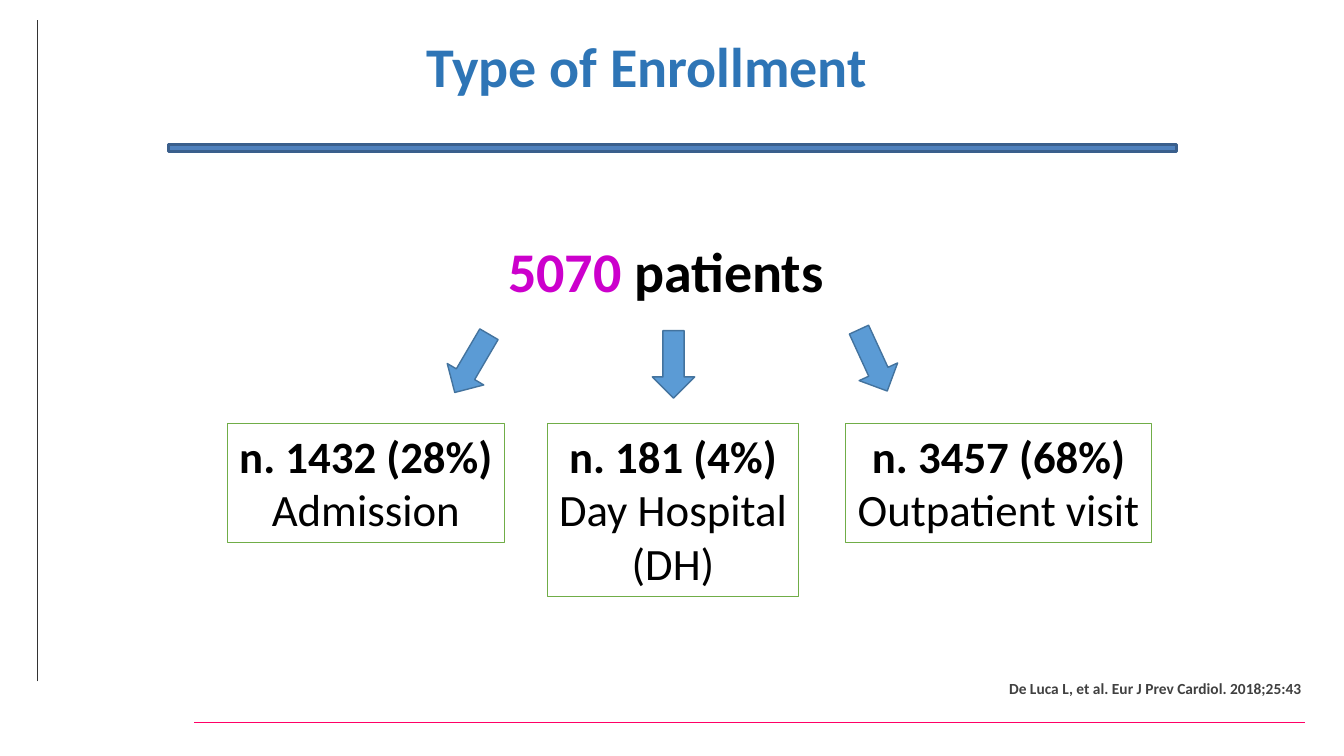
"""Build the enrollment slide: a patient total split into three groups."""
from dataclasses import dataclass

from lxml.etree import SubElement
from pptx import Presentation
from pptx.dml.color import RGBColor
from pptx.enum.shapes import MSO_CONNECTOR as Link, MSO_SHAPE as Shape
from pptx.enum.text import MSO_ANCHOR as Anchor, MSO_AUTO_SIZE as AutoSize, PP_ALIGN as Align
from pptx.oxml.ns import qn
from pptx.util import Inches, Pt


@dataclass(frozen=True)
class Theme:
    font: str = "Calibri"
    title: str = "2E75B6"
    text: str = "000000"
    total: str = "CC00CC"
    source: str = "404040"
    card_line: str = "70AD47"
    arrow: str = "5B9BD5"
    arrow_line: str = "43739E"
    bar: str = "4F81BD"
    bar_line: str = "3A5F8C"
    side_rule: str = "333333"
    base_rule: str = "FF0066"
    big: int = 40
    medium: int = 32
    small: int = 11


THEME = Theme()
WIDTH, HEIGHT = 13.33, 7.5

TITLE = "Type of Enrollment"
TOTAL = [("5070", THEME.total), (" patients", THEME.text)]
SOURCE = "De Luca L, et al. Eur J Prev Cardiol. 2018;25:43"
GROUPS = [
    {"lines": ["n. 1432 (28%)", "Admission"], "left": 2.26, "width": 2.74},
    {"lines": ["n. 181 (4%)", "Day Hospital", "(DH)"], "left": 5.43, "width": 2.49},
    {"lines": ["n. 3457 (68%)", "Outpatient visit"], "left": 8.39, "width": 3.03},
]
ARROWS = [(4.47, 3.27, 30.4), (6.47, 3.28, 0), (8.45, 3.24, -24.7)]
RULES = [
    ((0.37, 6.76), (0.37, 0.2), THEME.side_rule),
    ((12.94, 7.17), (1.92, 7.17), THEME.base_rule),
]
CARD_TOP, CARD_PADDING, LINE_HEIGHT = 4.2, 0.1, 0.54
ARROW_SIZE = (0.42, 0.67)


def color(code):
    return RGBColor.from_string(code)


def inches(*lengths):
    return [Inches(length) for length in lengths]


def add_span(para, text, size, code, bold=True):
    span = para.add_run()
    span.text = text
    span.font.name = THEME.font
    span.font.size = Pt(size)
    span.font.bold = bold
    span.font.color.rgb = color(code)


def prepare(box, anchor=Anchor.TOP, align=Align.LEFT):
    frame = box.text_frame
    frame.auto_size = AutoSize.NONE
    frame.word_wrap = False
    frame.vertical_anchor = anchor
    frame.paragraphs[0].alignment = align
    return frame


def add_block(page, kind, place, fill, line, weight):
    block = page.shapes.add_shape(kind, *inches(*place))
    block.shadow.inherit = False
    if fill:
        block.fill.solid()
        block.fill.fore_color.rgb = color(fill)
    else:
        block.fill.background()
    block.line.color.rgb = color(line)
    block.line.width = Pt(weight)
    return block


def add_rule(page, start, end, code):
    rule = page.shapes.add_connector(Link.STRAIGHT, *inches(*start, *end))
    rule.line.color.rgb = color(code)
    rule.line.width = Pt(0.5)
    SubElement(rule._element.spPr, qn("a:effectLst"))


def add_card(page, group):
    lines = group["lines"]
    height = CARD_PADDING + LINE_HEIGHT * len(lines)
    place = (group["left"], CARD_TOP, group["width"], height)
    card = add_block(page, Shape.RECTANGLE, place, None, THEME.card_line, 0.75)
    frame = prepare(card)
    for index, text in enumerate(lines):
        para = frame.add_paragraph() if index else frame.paragraphs[0]
        para.alignment = Align.CENTER
        add_span(para, text, THEME.medium, THEME.text, bold=index == 0)


def main():
    deck = Presentation()
    deck.slide_width, deck.slide_height = inches(WIDTH, HEIGHT)
    page = deck.slides.add_slide(deck.slide_layouts[5])

    title = page.shapes.title
    title.left, title.top, title.width, title.height = inches(4.13, 0.26, 4.62, 1.0)
    add_span(prepare(title).paragraphs[0], TITLE, THEME.big, THEME.title)

    for start, end, code in RULES:
        add_rule(page, start, end, code)

    total = page.shapes.add_textbox(*inches(2.24, 2.28, 8.73, 0.8))
    para = prepare(total, Anchor.MIDDLE, Align.CENTER).paragraphs[0]
    for text, code in TOTAL:
        add_span(para, text, THEME.big, code)

    for group in GROUPS:
        add_card(page, group)

    for left, top, turn in ARROWS:
        arrow = add_block(page, Shape.DOWN_ARROW, (left, top, *ARROW_SIZE),
                          THEME.arrow, THEME.arrow_line, 1)
        arrow.rotation = turn

    add_block(page, Shape.RECTANGLE, (1.67, 1.43, 10, 0.07), THEME.bar, THEME.bar_line, 2)

    source = page.shapes.add_textbox(*inches(9.91, 6.69, 3.13, 0.29))
    add_span(prepare(source).paragraphs[0], SOURCE, THEME.small, THEME.source)

    deck.save("out.pptx")


if __name__ == "__main__":
    main()
